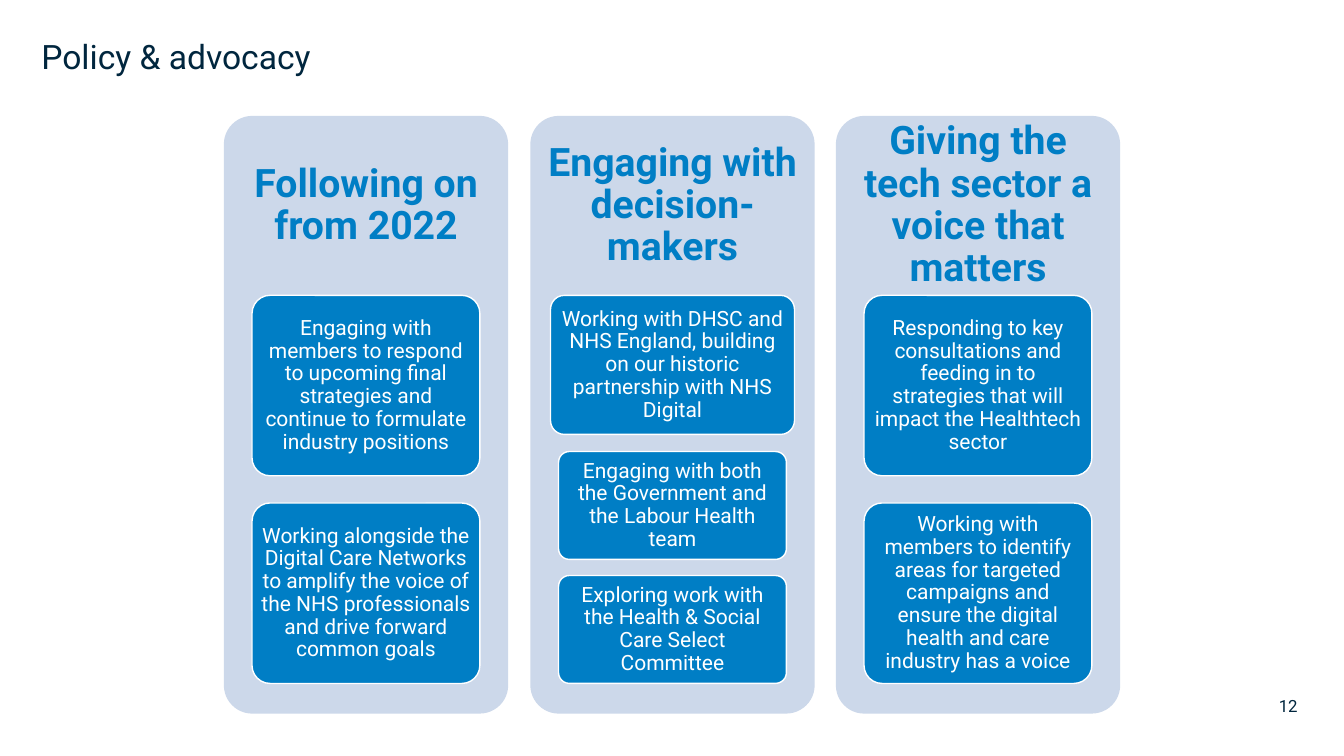
from dataclasses import dataclass

import pptx
import pptx.dml.color
import pptx.enum.shapes
import pptx.enum.text
import pptx.util

PX = 9144
ALIGN = pptx.enum.text.PP_ALIGN
ANCHOR = pptx.enum.text.MSO_ANCHOR


@dataclass(frozen=True)
class Theme:
    font: str = "Roboto"
    ink: str = "00263E"
    accent: str = "007EC5"
    panel: str = "CCD8EA"
    white: str = "FFFFFF"
    title_size: int = 24
    heading_size: int = 28
    card_size: int = 15
    number_size: int = 12


@dataclass(frozen=True)
class Area:
    left: int
    top: int
    width: int
    height: int

    def emu(self) -> tuple[int, ...]:
        return tuple(side * PX for side in (self.left, self.top, self.width, self.height))


@dataclass(frozen=True)
class TextStyle:
    size: int
    color: str
    align: ALIGN = ALIGN.CENTER
    anchor: ANCHOR = ANCHOR.MIDDLE
    insets: tuple[int, int, int, int] = (0, 0, 0, 0)
    spacing: float = 0.9
    bold: bool = False


@dataclass(frozen=True)
class Card:
    text: str
    width: int
    height: int


@dataclass(frozen=True)
class Column:
    heading: str
    cards: tuple[Card, ...]


THEME = Theme()
TITLE = TextStyle(THEME.title_size, THEME.ink, ALIGN.LEFT, ANCHOR.TOP)
HEADING = TextStyle(THEME.heading_size, THEME.accent, insets=(12, 12, 12, 12), bold=True)
CARD = TextStyle(THEME.card_size, THEME.white, insets=(4, 3, 4, 3))
NUMBER = TextStyle(THEME.number_size, THEME.ink, ALIGN.RIGHT, ANCHOR.TOP, (0, 6, 6, 6), 1.0)

PANEL = Area(222, 115, 282, 593)
PANEL_PITCH = 303.5
HEADING_HEIGHT = 178
CARDS_TOP = 293
CARDS_BOTTOM = 678

COLUMNS = (
    Column("Following on from 2022", (
        Card("Engaging with members to respond to upcoming final strategies "
             "and continue to formulate industry positions", 226, 179),
        Card("Working alongside the Digital Care Networks to amplify the voice of "
             "the NHS professionals and drive forward common goals", 226, 179),
    )),
    Column("Engaging with decision-makers", (
        Card("Working with DHSC and NHS England, building on our historic "
             "partnership with NHS Digital", 242, 138),
        Card("Engaging with both the Government and the Labour Health team", 226, 107),
        Card("Exploring work with the Health & Social Care Select Committee", 226, 107),
    )),
    Column("Giving the tech sector a voice that matters", (
        Card("Responding to key consultations and feeding in to strategies "
             "that will impact the Healthtech sector", 226, 179),
        Card("Working with members to identify areas for targeted campaigns and "
             "ensure the digital health and care industry has a voice", 226, 179),
    )),
)


def rgb(color: str) -> pptx.dml.color.RGBColor:
    return pptx.dml.color.RGBColor.from_string(color)


def write(box, text: str, style: TextStyle) -> None:
    frame = box.text_frame
    frame.text = text
    frame.word_wrap = True
    frame.vertical_anchor = style.anchor
    (frame.margin_left, frame.margin_top,
     frame.margin_right, frame.margin_bottom) = (inset * PX for inset in style.insets)
    para = frame.paragraphs[0]
    para.alignment = style.align
    para.line_spacing = style.spacing
    for span in para.runs:
        span.font.name = THEME.font
        span.font.size = pptx.util.Pt(style.size)
        span.font.bold = style.bold
        span.font.color.rgb = rgb(style.color)


def add_text(page, area: Area, text: str, style: TextStyle) -> None:
    write(page.shapes.add_textbox(*area.emu()), text, style)


def add_rounded(page, area: Area, fill: str, outline: str | None = None):
    kind = pptx.enum.shapes.MSO_SHAPE.ROUNDED_RECTANGLE
    box = page.shapes.add_shape(kind, *area.emu())
    box.adjustments[0] = 0.1
    box.shadow.inherit = False
    box.fill.solid()
    box.fill.fore_color.rgb = rgb(fill)
    if outline:
        box.line.color.rgb = rgb(outline)
        box.line.width = pptx.util.Pt(1)
    else:
        box.line.fill.background()
    return box


def add_column(page, column: Column, left: int) -> None:
    add_rounded(page, Area(left, PANEL.top, PANEL.width, PANEL.height), THEME.panel)
    add_text(page, Area(left, PANEL.top, PANEL.width, HEADING_HEIGHT), column.heading, HEADING)
    used = sum(card.height for card in column.cards)
    gap = (CARDS_BOTTOM - CARDS_TOP - used) / (len(column.cards) - 1)
    top = CARDS_TOP
    for card in column.cards:
        card_left = left + (PANEL.width - card.width) // 2
        area = Area(card_left, round(top), card.width, card.height)
        write(add_rounded(page, area, THEME.accent, THEME.white), card.text, CARD)
        top += card.height + gap


def main() -> None:
    deck = pptx.Presentation()
    deck.slide_width, deck.slide_height = 1333 * PX, 750 * PX
    page = deck.slides.add_slide(deck.slide_layouts[6])
    add_text(page, Area(41, 40, 905, 87), "Policy & advocacy", TITLE)
    for index, column in enumerate(COLUMNS):
        add_column(page, column, round(PANEL.left + index * PANEL_PITCH))
    add_text(page, Area(1169, 684, 124, 31), "12", NUMBER)
    deck.save("out.pptx")


if __name__ == "__main__":
    main()
